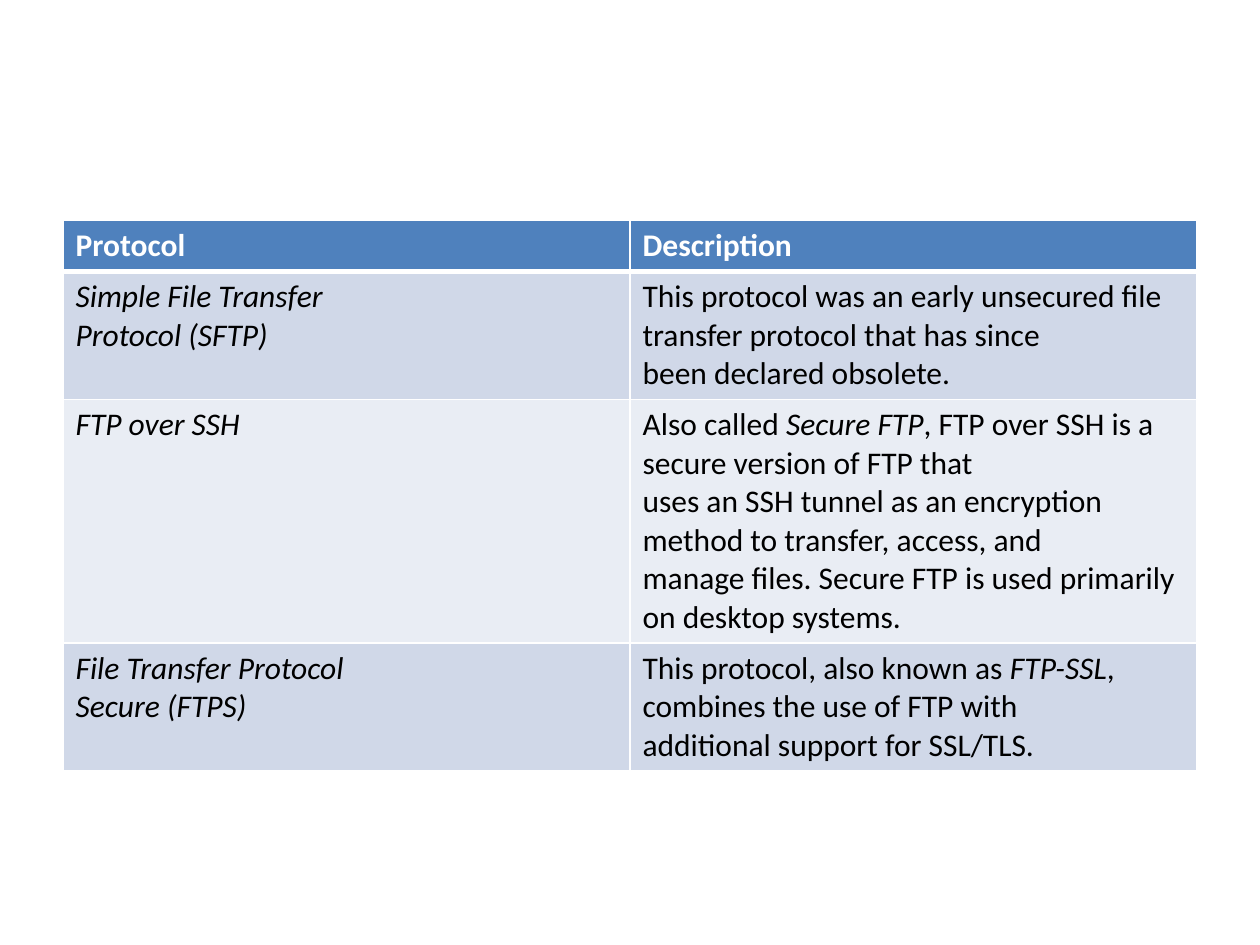
from lxml.etree import SubElement
from pptx import Presentation
from pptx.dml.color import RGBColor
from pptx.oxml.ns import qn
from pptx.util import Inches, Pt

COLORS = {"head": "4F81BD", "odd": "D0D8E8", "even": "E9EDF4",
          "white": "FFFFFF", "black": "000000"}
WIDTHS = [4.5, 4.5]
HEIGHTS = [0.4, 1.01, 1.93, 1.01]

# Each cell is a list of paragraphs; *stars* switch italics.
ROWS = [
    (["Protocol"], ["Description"]),
    (["*Simple File Transfer*", "*Protocol (SFTP)*"],
     ["This protocol was an early unsecured file transfer protocol that has since",
      "been declared obsolete."]),
    (["*FTP over SSH*"],
     ["Also called *Secure FTP*, FTP over SSH is a secure version of FTP that",
      "uses an SSH tunnel as an encryption method to transfer, access, and",
      "manage files. Secure FTP is used primarily on desktop systems."]),
    (["*File Transfer Protocol*", "*Secure (FTPS)*"],
     ["This protocol, also known as *FTP-SSL*, combines the use of FTP with",
      "additional support for SSL/TLS."]),
]


def write(frame, lines, font="Calibri", size=18, color="black", bold=False):
    """Fill a text frame with one paragraph per line, *stars* marking italics."""
    for row, line in enumerate(lines):
        para = frame.add_paragraph() if row else frame.paragraphs[0]
        for part, text in enumerate(line.split("*")):
            if not text:
                continue
            run = para.add_run()
            run.text = text
            run.font.name = font
            run.font.size = Pt(size)
            run.font.bold = bold
            run.font.italic = part % 2 == 1
            run.font.color.rgb = RGBColor.from_string(COLORS[color])


def edge(cell, side, width, color="white"):
    """Draw one border of a cell; side is L, R, T or B."""
    line = SubElement(cell._tc.get_or_add_tcPr(), qn(f"a:ln{side}"), w=str(Pt(width)))
    fill = SubElement(line, qn("a:solidFill"))
    SubElement(fill, qn("a:srgbClr"), val=COLORS[color])


class Deck:
    def __init__(self):
        self.prs = Presentation()
        self.prs.slide_width, self.prs.slide_height = Inches(10), Inches(7.5)
        self.slide = self.prs.slides.add_slide(self.prs.slide_layouts[6])

    def table(self, left, top, widths, heights, rows):
        table = self.slide.shapes.add_table(
            len(rows), len(widths), Inches(left), Inches(top),
            Inches(sum(widths)), Inches(sum(heights))).table
        for col, width in zip(table.columns, widths):
            col.width = Inches(width)
        for num, (row, height) in enumerate(zip(table.rows, heights)):
            row.height = Inches(height)
            for cell, lines in zip(row.cells, rows[num]):
                self.cell(cell, num, lines)

    def cell(self, cell, num, lines):
        head = num == 0
        sides = {"L": 1, "R": 1, "T": 3 if num == 1 else 1, "B": 3 if head else 1}
        for side, width in sides.items():
            edge(cell, side, width)
        shade = "head" if head else "odd" if num % 2 else "even"
        cell.fill.solid()
        cell.fill.fore_color.rgb = RGBColor.from_string(COLORS[shade])
        write(cell.text_frame, lines, color="white" if head else "black", bold=head)


def main():
    deck = Deck()
    deck.table(0.5, 1.75, WIDTHS, HEIGHTS, ROWS)
    deck.prs.save("out.pptx")


if __name__ == "__main__":
    main()
